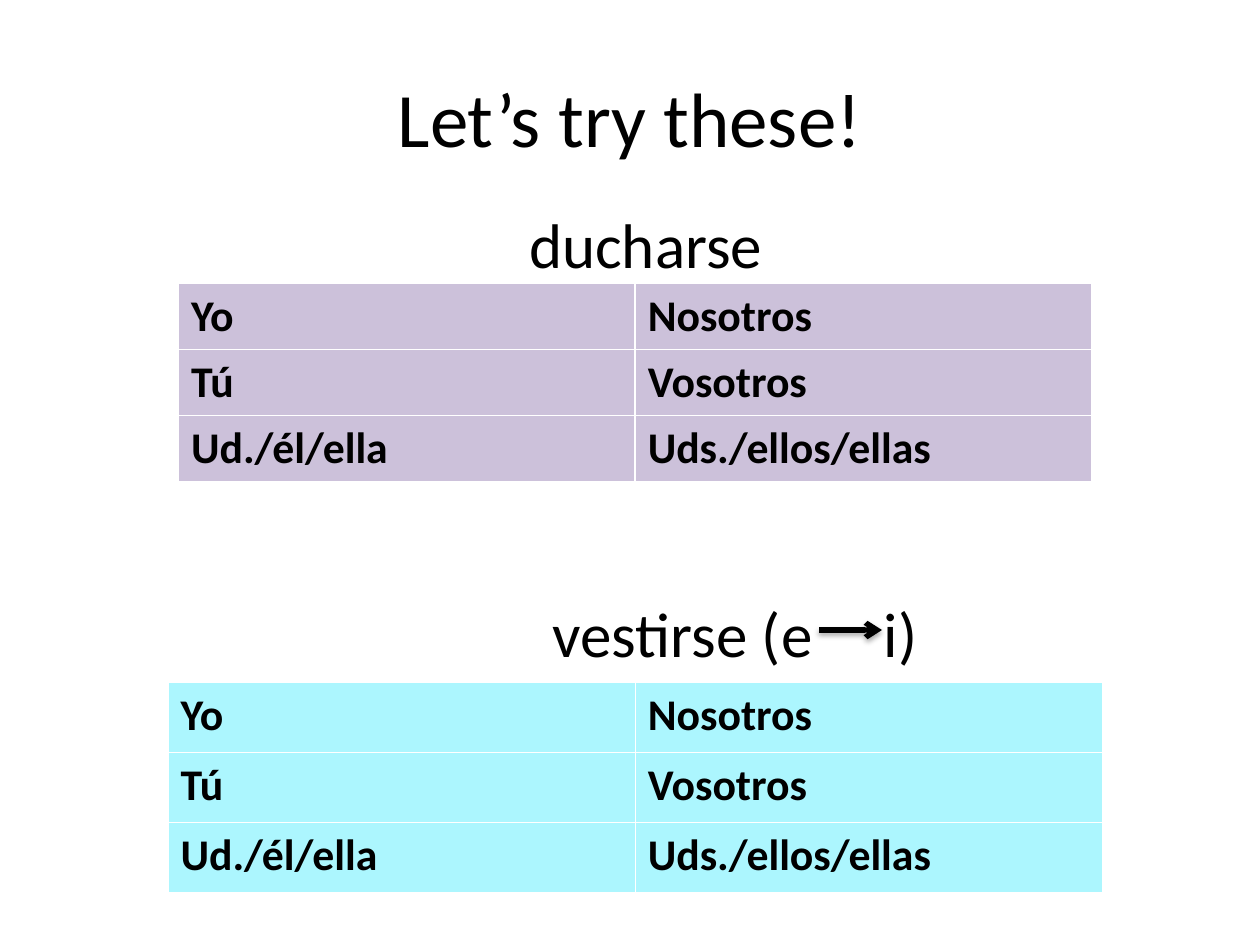
"""Build a slide with two reflexive verb tables to conjugate."""
from lxml import etree
from pptx import Presentation
from pptx.dml.color import RGBColor
from pptx.enum.shapes import MSO_CONNECTOR
from pptx.enum.text import MSO_ANCHOR, PP_ALIGN
from pptx.oxml import parse_xml
from pptx.util import Pt

BLACK = RGBColor(0x00, 0x00, 0x00)
WHITE = RGBColor(0xFF, 0xFF, 0xFF)
LILAC = RGBColor(0xCC, 0xC1, 0xDA)
AQUA = RGBColor(0xAC, 0xF6, 0xFE)
CENTER = PP_ALIGN.CENTER
TOP = MSO_ANCHOR.TOP
MIDDLE = MSO_ANCHOR.MIDDLE
STRAIGHT = MSO_CONNECTOR.STRAIGHT
NAMESPACE = 'xmlns:a="http://schemas.openxmlformats.org/drawingml/2006/main"'
PRONOUNS = [
    ("Yo", "Nosotros"),
    ("Tú", "Vosotros"),
    ("Ud./él/ella", "Uds./ellos/ellas"),
]


def add_run(paragraph, text, size, bold=False):
    run = paragraph.add_run()
    run.text = text
    font_values = {"name": "Calibri", "size": Pt(size), "bold": bold}
    for name, value in font_values.items():
        setattr(run.font, name, value)
    run.font.color.rgb = BLACK
    return run


presentation = Presentation()
presentation.slide_width = Pt(720)
presentation.slide_height = Pt(540)
slide = presentation.slides.add_slide(presentation.slide_layouts[6])

headings = [
    (["Let’s try these!"], 44, MIDDLE, (36, 21.6, 648, 90)),
    (["ducharse"], 36, TOP, (276, 114, 186, 51)),
    (["vestirse (e", " ", "i)"], 36, TOP, (282, 336, 276, 51)),
]
for texts, size, anchor, box in headings:
    shape = slide.shapes.add_textbox(*map(Pt, box))
    shape.text_frame.word_wrap = True
    shape.text_frame.vertical_anchor = anchor
    paragraph = shape.text_frame.paragraphs[0]
    paragraph.alignment = CENTER
    for text in texts:
        run = add_run(paragraph, text, size)
        if text == " ":
            run.font._element.set("spc", "3250")

tables = [
    (LILAC, 102, 162, 522, 37.7),
    (AQUA, 96, 390, 534, 40),
]
for color, left, top, width, row_height in tables:
    shape = slide.shapes.add_table(
        len(PRONOUNS), 2, Pt(left), Pt(top), Pt(width), Pt(row_height * len(PRONOUNS))
    )
    table = shape.table
    for row, pronouns in zip(table.rows, PRONOUNS):
        row.height = Pt(row_height)
        for cell, pronoun in zip(row.cells, pronouns):
            add_run(cell.text_frame.paragraphs[0], pronoun, 25, bold=True)
            cell.fill.solid()
            cell.fill.fore_color.rgb = color
            properties = cell._tc.get_or_add_tcPr()
            for position, side in enumerate(("lnL", "lnR", "lnT", "lnB")):
                border = parse_xml(
                    f'<a:{side} {NAMESPACE} w="{Pt(1)}"><a:solidFill>'
                    f'<a:srgbClr val="{WHITE}"/></a:solidFill></a:{side}>'
                )
                properties.insert(position, border)

arrow = slide.shapes.add_connector(STRAIGHT, Pt(468), Pt(360), Pt(504), Pt(360))
arrow.line.width = Pt(3)
arrow.line.color.rgb = BLACK
line = arrow.line._get_or_add_ln()
etree.SubElement(line, line.tag.replace("}ln", "}tailEnd"), type="arrow")
shadow = parse_xml(
    f'<a:effectLst {NAMESPACE}><a:outerShdw blurRad="{Pt(3.1)}" dist="{Pt(1.8)}" '
    f'dir="5400000" rotWithShape="0"><a:srgbClr val="{BLACK}">'
    '<a:alpha val="35000"/></a:srgbClr></a:outerShdw></a:effectLst>'
)
arrow._element.spPr.append(shadow)

presentation.save("out.pptx")
